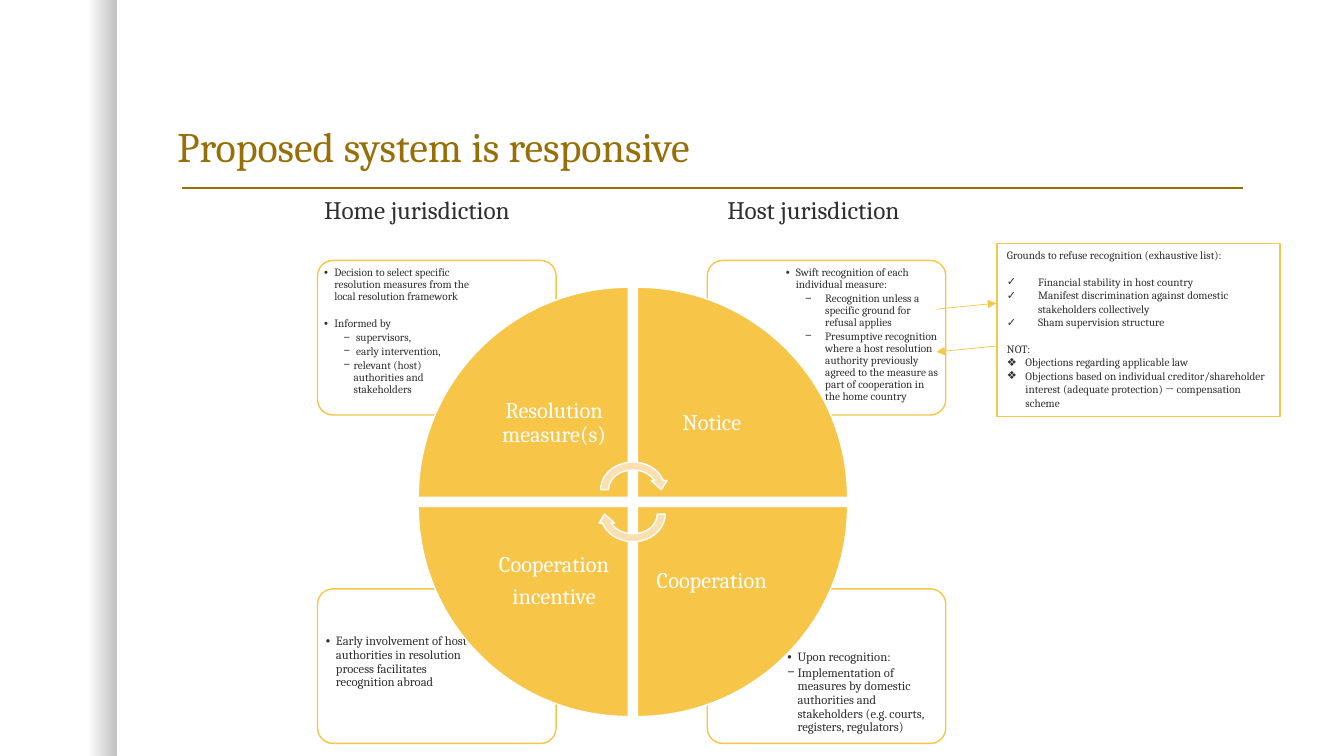
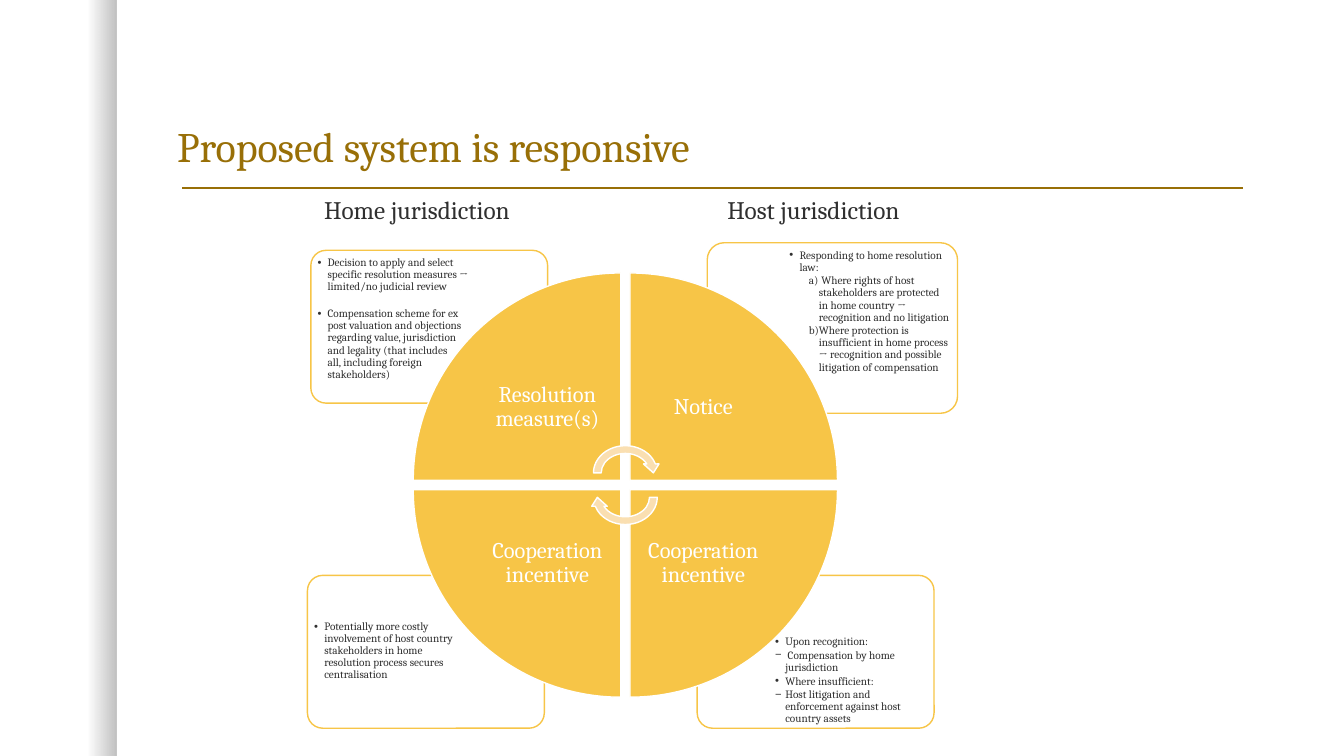
import dataclasses

import pptx
import pptx.dml.color
import pptx.enum.shapes
import pptx.enum.text
import pptx.oxml
import pptx.oxml.ns
import pptx.util

Pt = pptx.util.Pt
Kind = pptx.enum.shapes.MSO_SHAPE
Anchor = pptx.enum.text.MSO_ANCHOR
Align = pptx.enum.text.PP_ALIGN

WIDE, HIGH = 160, 90  # grid of square cells, twelve to the inch
CELL = pptx.util.Inches(1) // 12
FONT = "Cambria"
INK = {"title": "986F07", "text": "303030", "gold": "F7C547",
       "pale": "FADFB1", "white": "FFFFFF", "black": "000000"}


@dataclasses.dataclass
class Item:
    """A paragraph; left, hang in cells, gap in points before it."""
    text: str
    mark: str = "•"
    left: float = 1.2
    hang: float = 1.2
    gap: float = 0


def dash(text, left=3.5, hang=1.2):
    return Item(text, "−", left, hang)


def case(text):
    return Item(text, "a)", 3.5)


def tick(text, gap=0):
    return Item(text, "✓", 3.7, 3.7, gap)


def gem(text):
    return Item(text, "❖", 2.2, 2.2)


def plain(text, gap=0):
    return Item(text, "", 0, 0, gap)


def grid(*cells):
    return [round(cell * CELL) for cell in cells]


def tint(name):
    return pptx.dml.color.RGBColor.from_string(INK[name])


def node(parent, tag, **values):
    child = parent.makeelement(pptx.oxml.ns.qn(tag), values)
    parent.append(child)
    return child


def fade(shape, *shares):
    """Set the opacity, in percent, of the first colours of a shape."""
    tones = list(shape._element.spPr.iter(pptx.oxml.ns.qn("a:srgbClr")))
    for tone, share in zip(tones, shares):
        node(tone, "a:alpha", val=str(share * 1000))


def style(para, size, ink):
    for run in para.runs:
        run.font.size = Pt(size)
        run.font.name = FONT
        run.font.color.rgb = tint(ink)


def mark(para, item):
    props = para._p.get_or_add_pPr()
    left, hang = grid(item.left, item.hang)
    props.set("marL", str(left))
    props.set("indent", str(-hang))
    if item.mark == "a)":
        node(props, "a:buAutoNum", type="alphaLcParenR")
    elif item.mark:
        node(props, "a:buFont", typeface="Arial")
        node(props, "a:buChar", char=item.mark)
    else:
        node(props, "a:buNone")


def write(frame, items, size, ink="text", lead=1, after=0, align=Align.LEFT):
    frame.word_wrap = True
    for spot, item in enumerate(items):
        para = frame.add_paragraph() if spot else frame.paragraphs[0]
        para.text = item.text
        para.alignment = align
        para.line_spacing = lead
        para.space_before = Pt(item.gap)
        para.space_after = Pt(after)
        mark(para, item)
        style(para, size, ink)


def label(slide, box, pad):
    frame = slide.shapes.add_textbox(*grid(*box)).text_frame
    frame.margin_left = frame.margin_right = Pt(pad)
    frame.margin_top = frame.margin_bottom = Pt(pad)
    return frame


def block(slide, kind, box, fill, line, turn=0):
    shape = slide.shapes.add_shape(kind, *grid(*box))
    shape.shadow.inherit = False
    shape.rotation = turn
    shape.fill.solid()
    shape.fill.fore_color.rgb = tint(fill)
    shape.line.color.rgb = tint(line)
    shape.line.width = Pt(1)
    return shape


def rule(slide, ends, ink, width, arrow=False):
    straight = pptx.enum.shapes.MSO_CONNECTOR.STRAIGHT
    line = slide.shapes.add_connector(straight, *grid(*ends))
    line.line.color.rgb = tint(ink)
    line.line.width = Pt(width)
    if arrow:
        node(line.line._get_or_add_ln(), "a:tailEnd", type="triangle")
    node(line._element.spPr, "a:effectLst")


def band(slide):
    shape = block(slide, Kind.RECTANGLE, (0, 0, 13.9, HIGH), "white", "white")
    shape.line.fill.background()
    shape.fill.gradient()
    shape.fill.gradient_angle = 0
    for stop, place in zip(shape.fill.gradient_stops, (0.75, 1)):
        stop.color.rgb = tint("black")
        stop.position = place
    fade(shape, 0, 25)


def heads(slide):
    frame = slide.shapes.add_textbox(*grid(37.4, 22.6, 80, 4.8)).text_frame
    frame.word_wrap = True
    para = frame.paragraphs[0]
    para.text = "Home jurisdiction\tHost jurisdiction"
    tabs = node(para._p.get_or_add_pPr(), "a:tabLst")
    node(tabs, "a:tab", pos=str(48 * CELL), algn="l")
    style(para, 18, "text")


def page(deck):
    slide = deck.slides.add_slide(deck.slide_layouts[5])
    band(slide)
    rule(slide, (21.7, 22.4, 148, 22.4), "title", 1)
    title = slide.shapes.title
    title.left, title.top, title.width, title.height = grid(19.9, 5, 129, 16)
    frame = title.text_frame
    frame.vertical_anchor = Anchor.BOTTOM
    write(frame, [plain("Proposed system is responsive")], 30, "title", 0.9)
    heads(slide)
    return slide


def card(slide, box, items, right=False, drop=0.4, size=8):
    """Outlined box with its text on the outer side, drop cells down."""
    left, top, wide, high = box
    shape = block(slide, Kind.ROUNDED_RECTANGLE, box, "white", "gold")
    shape.adjustments[0] = 0.1
    fade(shape, 90)
    start = left + (0.315 * wide if right else 0.4)
    frame = label(slide, (start, top + drop, 0.67 * wide, 0.7 * high),
                  3.6 if size > 8 else 2.4)
    write(frame, items, size, lead=0.9, after=round(0.15 * size, 2))


def wheel(slide, left, top, side, names):
    """Four wedges, clockwise from top left, and two turning arrows."""
    gap, inner = 1.1, 0.707 * side
    step = side + gap
    spots = [(0, 0), (1, 0), (1, 1), (0, 1)]
    for turn, ((col, row), lines) in enumerate(zip(spots, names)):
        x, y = left + col * step, top + row * step
        block(slide, Kind.PIE_WEDGE, (x, y, side, side),
              "gold", "white", 90 * turn)
        frame = label(slide, (x + (1 - col) * (side - inner),
                              y + (1 - row) * (side - inner),
                              inner, inner), 8.6)
        frame.vertical_anchor = Anchor.MIDDLE
        write(frame, [plain(line) for line in lines], 16, "white",
              0.9, 5.6, Align.CENTER)
    wide, high = 0.345 * side, 0.3 * side
    mid_x, mid_y = left + side + gap / 2, top + side + gap / 2
    for shift, turn in ((-1.45, 0), (1.45, 180)):
        block(slide, Kind.CIRCULAR_ARROW,
              (mid_x - wide / 2, mid_y + shift - high / 2, wide, high),
              "pale", "white", turn)


def grounds(slide):
    box = block(slide, Kind.RECTANGLE, (118.7, 29, 33.7, 20.6),
                "white", "gold")
    box.text_frame.vertical_anchor = Anchor.TOP
    write(box.text_frame, [
        plain("Grounds to refuse recognition (exhaustive list):"),
        tick("Financial stability in host country", 9.5),
        tick("Manifest discrimination against domestic stakeholders "
             "collectively"),
        tick("Sham supervision structure"),
        plain("NOT:", 9.5),
        gem("Objections regarding applicable law"),
        gem("Objections based on individual creditor/shareholder interest "
            "(adequate protection) → compensation scheme")], 8)
    rule(slide, (111.5, 36.8, 118.6, 36.1), "gold", 0.5, True)
    rule(slide, (118.6, 41.2, 111.5, 41.9), "gold", 0.5, True)


def measures(deck):
    slide = page(deck)
    home, host, upper, lower = 37.8, 84.2, 31, 70.1
    size = (28.4, 18.4)
    card(slide, (host, lower, *size), [
        Item("Upon recognition:"),
        dash("Implementation of measures by domestic authorities and "
             "stakeholders (e.g. courts, registers, regulators)", 1.2)],
        True, 6.8, 9)
    card(slide, (home, lower, *size), [
        Item("Early involvement of host authorities in resolution process "
             "facilitates recognition abroad")], drop=4.9, size=9)
    card(slide, (host, upper, *size), [
        Item("Swift recognition of each individual measure:"),
        dash("Recognition unless a specific ground for refusal applies",
             4.7, 2.4),
        dash("Presumptive recognition where a host resolution authority "
             "previously agreed to the measure as part of cooperation in "
             "the home country", 4.7, 2.4)], True)
    card(slide, (home, upper, *size), [
        Item("Decision to select specific resolution measures from the "
             "local resolution framework"),
        Item("Informed by", gap=9.5),
        dash(" supervisors,"),
        dash(" early intervention,"),
        dash("relevant (host)\vauthorities and stakeholders")])
    wheel(slide, 49.8, 34.2, 25, [
        ["Resolution measure(s)"], ["Notice"], ["Cooperation"],
        ["Cooperation", "incentive"]])
    grounds(slide)


def claims(deck):
    slide = page(deck)
    size = (28.2, 18.2)
    card(slide, (83, 68.5, *size), [
        Item("Upon recognition:"),
        dash(" Compensation by home jurisdiction", 1.2),
        Item("Where insufficient:"),
        dash("Host litigation and enforcement against host country assets",
             1.2)], True, 6.8)
    card(slide, (36.6, 68.5, *size), [
        Item("Potentially more costly involvement of host country "
             "stakeholders in home resolution process secures "
             "centralisation")], drop=5)
    card(slide, (84.2, 28.9, 29.8, 20.3), [
        Item("Responding to home resolution law:"),
        case(" Where rights of host stakeholders are protected in home "
             "country → recognition and no litigation"),
        case("Where protection is insufficient in home process → "
             "recognition and possible litigation of compensation")], True)
    card(slide, (37, 29.8, *size), [
        Item("Decision to apply and select specific resolution measures → "
             "limited/no judicial review"),
        Item("Compensation scheme for ex post valuation and objections "
             "regarding value, jurisdiction and legality (that includes\v"
             "all, including foreign stakeholders)", gap=9.5)])
    pair = ["Cooperation incentive"]
    wheel(slide, 49.2, 32.5, 24.7, [
        ["Resolution measure(s)"], ["Notice"], pair, pair])


def main():
    deck = pptx.Presentation()
    deck.slide_width, deck.slide_height = grid(WIDE, HIGH)
    measures(deck)
    claims(deck)
    deck.save("out.pptx")


if __name__ == "__main__":
    main()
